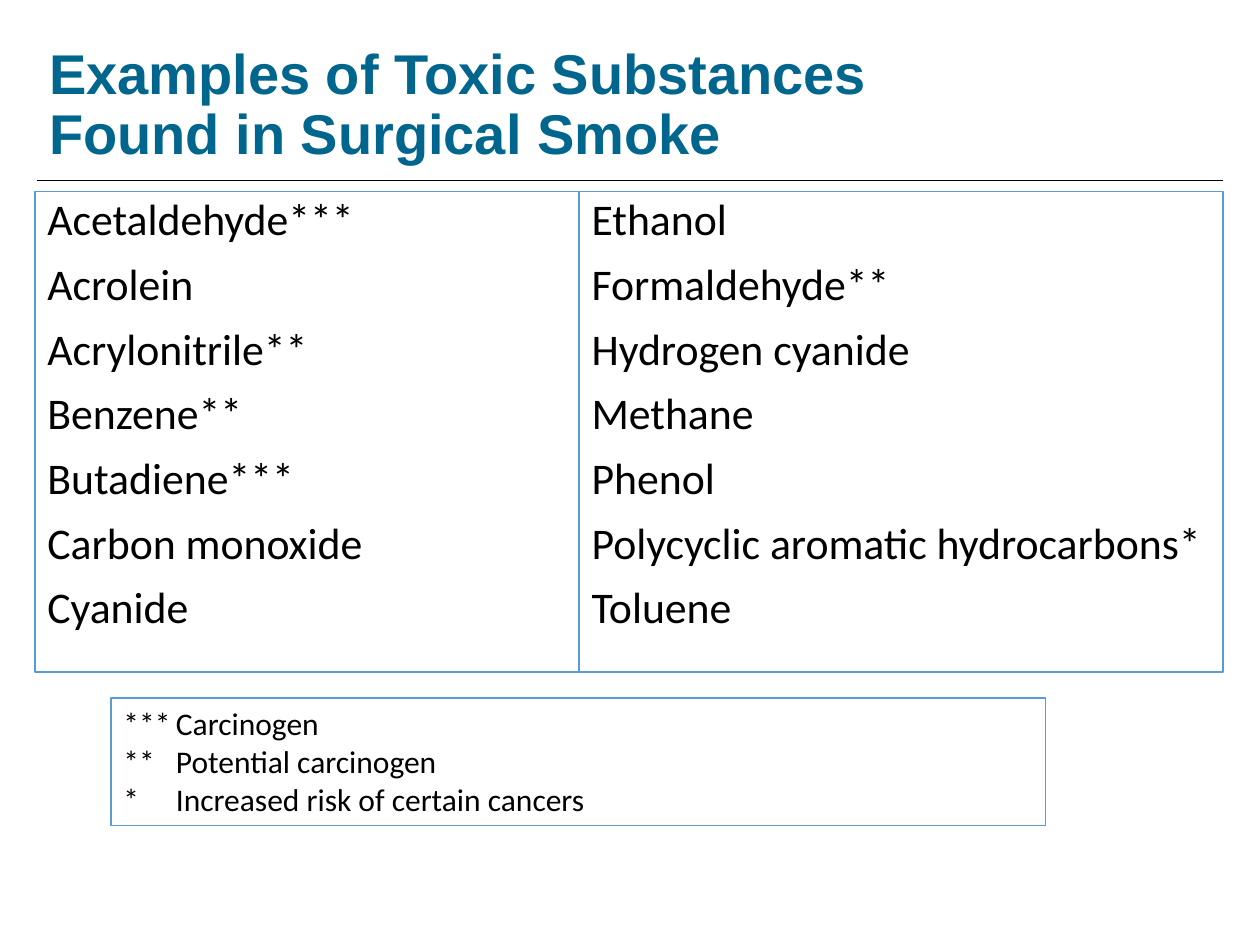
from lxml import etree
from pptx import Presentation
from pptx.dml.color import RGBColor
from pptx.enum.shapes import MSO_CONNECTOR, MSO_SHAPE
from pptx.enum.text import MSO_ANCHOR, PP_ALIGN
from pptx.oxml.ns import qn
from pptx.util import Pt

RECTANGLE = MSO_SHAPE.RECTANGLE
STRAIGHT = MSO_CONNECTOR.STRAIGHT
TOP, BOTTOM = MSO_ANCHOR.TOP, MSO_ANCHOR.BOTTOM
LEFT = PP_ALIGN.LEFT

TEAL = RGBColor(0x00, 0x66, 0x8D)
BLUE = RGBColor(0x5B, 0x9B, 0xD5)
BLACK = RGBColor(0x00, 0x00, 0x00)

# Content
TITLE = "Examples of Toxic Substances\vFound in Surgical Smoke"
SUBSTANCES = [
    ["Acetaldehyde***", "Acrolein", "Acrylonitrile**", "Benzene**",
     "Butadiene***", "Carbon monoxide", "Cyanide"],
    ["Ethanol", "Formaldehyde**", "Hydrogen cyanide", "Methane", "Phenol",
     "Polycyclic aromatic hydrocarbons*", "Toluene"],
]
LEGEND = [
    ("***", "Carcinogen"),
    ("**", "Potential carcinogen"),
    ("*", "Increased risk of certain cancers"),
]

# Layout in points
COLUMN_LEFT, COLUMN_TOP, COLUMN_HEIGHT = 20, 109.5, 274.5
COLUMN_WIDTHS = [311, 368]
LEGEND_TAB = 30


def write(holder, lines, size, font="Calibri", color=BLACK, bold=False,
          anchor=TOP, line_spacing=1.0, gap=0, tab=None):
    frame = holder.text_frame
    frame.word_wrap = True
    frame.vertical_anchor = anchor
    for i, line in enumerate(lines):
        paragraph = frame.add_paragraph() if i else frame.paragraphs[0]
        paragraph.text = line
        paragraph.alignment = LEFT
        paragraph.line_spacing = line_spacing
        paragraph.space_before = Pt(gap if i else 0)
        if tab:
            stops = etree.SubElement(paragraph._p.get_or_add_pPr(), qn("a:tabLst"))
            etree.SubElement(stops, qn("a:tab"), pos=str(Pt(tab)), algn="l")
        for run in paragraph.runs:
            run.font.name = font
            run.font.size = Pt(size)
            run.font.bold = bold
            run.font.color.rgb = color


def add_frame(slide, left, top, width, height):
    frame = slide.shapes.add_shape(
        RECTANGLE, Pt(left), Pt(top), Pt(width), Pt(height))
    frame.shadow.inherit = False
    frame.fill.background()
    frame.line.color.rgb = BLUE
    frame.line.width = Pt(1)
    return frame


def main():
    deck = Presentation()
    deck.slide_width, deck.slide_height = Pt(720), Pt(540)
    slide = deck.slides.add_slide(deck.slide_layouts[6])

    # Rule under the title
    rule = slide.shapes.add_connector(STRAIGHT, Pt(21), Pt(103), Pt(699), Pt(103))
    rule.line.color.rgb = BLACK
    rule.line.width = Pt(0.5)
    etree.SubElement(rule._element.spPr, qn("a:effectLst"))

    # Two adjoining columns of substances
    left = COLUMN_LEFT
    for substances, width in zip(SUBSTANCES, COLUMN_WIDTHS):
        column = add_frame(slide, left, COLUMN_TOP, width, COLUMN_HEIGHT)
        write(column, substances, 25, line_spacing=0.9, gap=10)
        left += width

    # Title
    title = slide.shapes.add_textbox(Pt(21), Pt(20), Pt(679), Pt(79))
    write(title, [TITLE], 32, font="Arial", color=TEAL, bold=True,
          anchor=BOTTOM, line_spacing=0.9)

    # Legend for the asterisks
    legend = add_frame(slide, 63.5, 399, 534, 72.7)
    write(legend, [f"{mark}\t{meaning}" for mark, meaning in LEGEND], 18,
          tab=LEGEND_TAB)

    deck.save("out.pptx")


if __name__ == "__main__":
    main()
